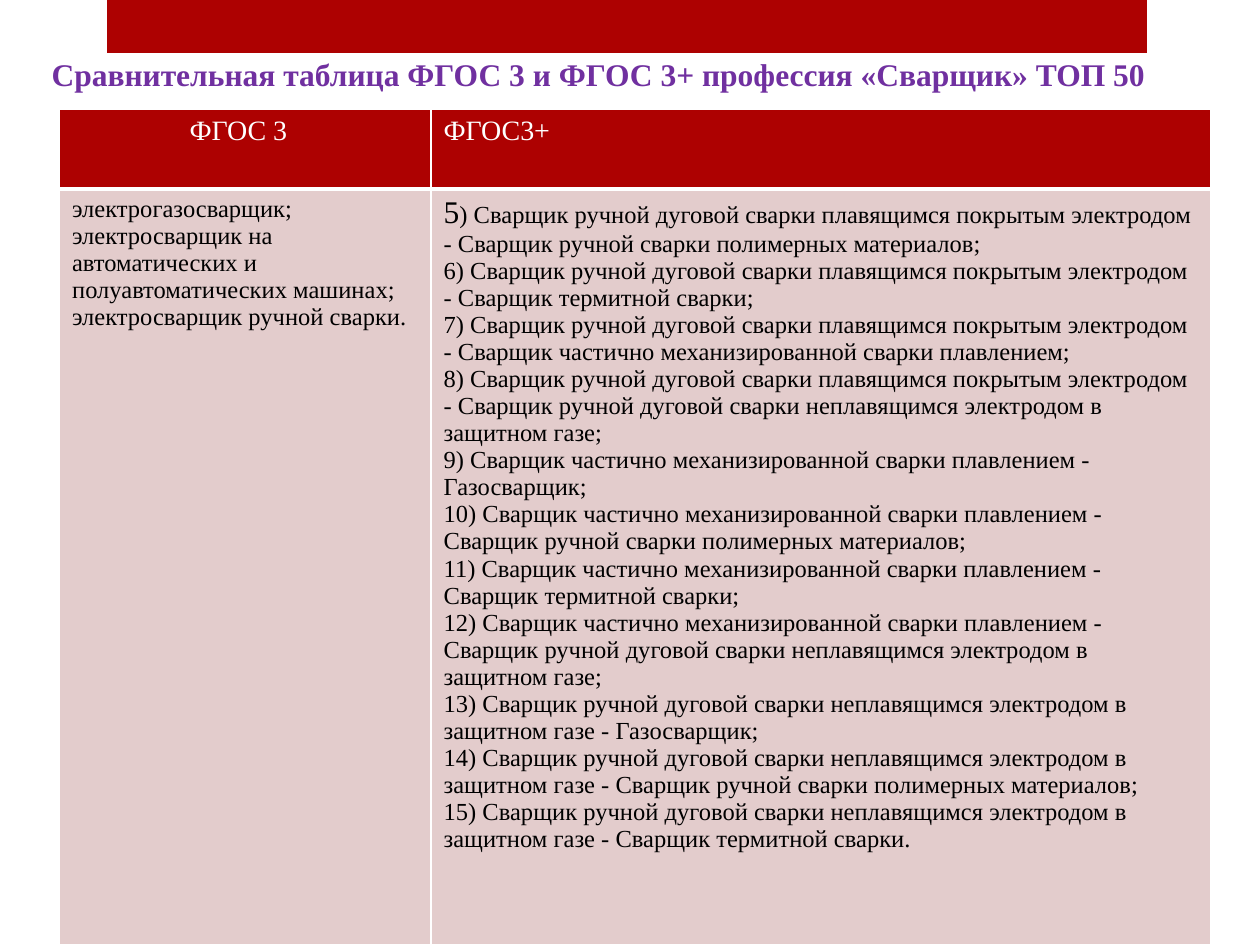
from lxml.etree import SubElement
from pptx import Presentation
from pptx.dml.color import RGBColor
from pptx.enum.shapes import MSO_SHAPE
from pptx.enum.text import MSO_AUTO_SIZE, PP_ALIGN
from pptx.oxml.ns import qn
from pptx.util import Cm, Pt

FONT = "Times New Roman"
RED, PINK, PURPLE, WHITE, BLACK = "AD0101", "E3CCCC", "7030A0", "FFFFFF", "000000"

ARC = "Сварщик ручной дуговой сварки плавящимся покрытым электродом"
PARTIAL = "Сварщик частично механизированной сварки плавлением"
INERT = "Сварщик ручной дуговой сварки неплавящимся электродом в защитном газе"
POLYMER = "Сварщик ручной сварки полимерных материалов"
THERMITE = "Сварщик термитной сварки"
GAS = "Газосварщик"

OLD_TRADES = [
    "электрогазосварщик;",
    "электросварщик на автоматических и полуавтоматических машинах;",
    "электросварщик ручной сварки.",
]
NEW_PAIRS = {
    ARC: [POLYMER, THERMITE, PARTIAL, INERT],
    PARTIAL: [GAS, POLYMER, THERMITE, INERT],
    INERT: [GAS, POLYMER, THERMITE],
}
FIRST_NUMBER = 5


def color(value):
    """Turn a hex string into a colour."""
    return RGBColor.from_string(value)


def style(font, size, value, bold=False):
    """Set the typeface, size, colour and weight of a font."""
    font.name, font.size, font.bold = FONT, Pt(size), bold
    font.color.rgb = color(value)


def number_trades():
    """List the numbered trade combinations, closing the last with a full stop."""
    pairs = [f"{first} - {second}" for first, seconds in NEW_PAIRS.items() for second in seconds]
    lines = [f"{number}) {pair};" for number, pair in enumerate(pairs, FIRST_NUMBER)]
    lines[-1] = lines[-1].replace(";", ".")
    return lines


def add_band(page, left, top, width, height):
    """Add the red band at the top of the page."""
    band = page.shapes.add_shape(MSO_SHAPE.RECTANGLE, left, top, width, height)
    band.shadow.inherit = False
    band.fill.solid()
    band.fill.fore_color.rgb = color(RED)
    band.line.fill.background()


def add_title(page, left, top, width, height):
    """Add the title line."""
    frame = page.shapes.add_textbox(left, top, width, height).text_frame
    frame.word_wrap = True
    frame.auto_size = MSO_AUTO_SIZE.SHAPE_TO_FIT_TEXT
    para = frame.paragraphs[0]
    para.text = "Сравнительная таблица ФГОС 3 и ФГОС 3+ профессия «Сварщик» ТОП 50"
    style(para.font, 18, PURPLE, bold=True)


def add_borders(cell, bottom, top):
    """Draw white borders around a cell, with widths in points."""
    properties = cell._tc.get_or_add_tcPr()
    for side, width in (("L", 1), ("R", 1), ("T", top), ("B", bottom)):
        line = SubElement(properties, qn(f"a:ln{side}"), w=str(Pt(width)))
        fill = SubElement(line, qn("a:solidFill"))
        SubElement(fill, qn("a:srgbClr"), val=WHITE)


def fill_cell(cell, lines, size, text_color, background, bottom=1, top=1):
    """Write one paragraph per line and paint the cell."""
    add_borders(cell, bottom, top)
    cell.fill.solid()
    cell.fill.fore_color.rgb = color(background)
    cell.text = "\n".join(lines)
    for para in cell.text_frame.paragraphs:
        style(para.font, size, text_color)


def add_comparison(page, left, top, width, height):
    """Add the table that compares the two standards."""
    table = page.shapes.add_table(2, 2, left, top, width, height).table
    table.first_row = table.horz_banding = False
    table.columns[0].width = Cm(7.49)
    table.columns[1].width = width - Cm(7.49)
    table.rows[0].height = Cm(1.6)
    table.rows[1].height = height - Cm(1.6)

    for column, heading in enumerate(("ФГОС 3", "ФГОС3+")):
        fill_cell(table.cell(0, column), [heading], 16, WHITE, RED, bottom=3)
    old_heading = table.cell(0, 0)
    old_heading.text_frame.paragraphs[0].alignment = PP_ALIGN.CENTER
    old_heading.margin_right = Cm(0.53)

    for column, lines in enumerate((OLD_TRADES, number_trades())):
        fill_cell(table.cell(1, column), lines, 14, BLACK, PINK, top=3)
    para = table.cell(1, 1).text_frame.paragraphs[0]
    number, rest = para.runs[0], para.add_run()
    number.text, rest.text = number.text[:1], number.text[1:]
    number.font.size = Pt(18)


def main():
    """Build and save the deck."""
    deck = Presentation()
    deck.slide_width, deck.slide_height = Cm(25.4), Cm(19.05)
    page = deck.slides.add_slide(deck.slide_layouts[6])
    add_band(page, Cm(2.16), Cm(0), Cm(20.96), Cm(1.07))
    add_title(page, Cm(0.79), Cm(0.99), Cm(23.42), Cm(1.02))
    add_comparison(page, Cm(1.2), Cm(2.21), Cm(23.21), Cm(16.84))
    deck.save("out.pptx")


if __name__ == "__main__":
    main()
